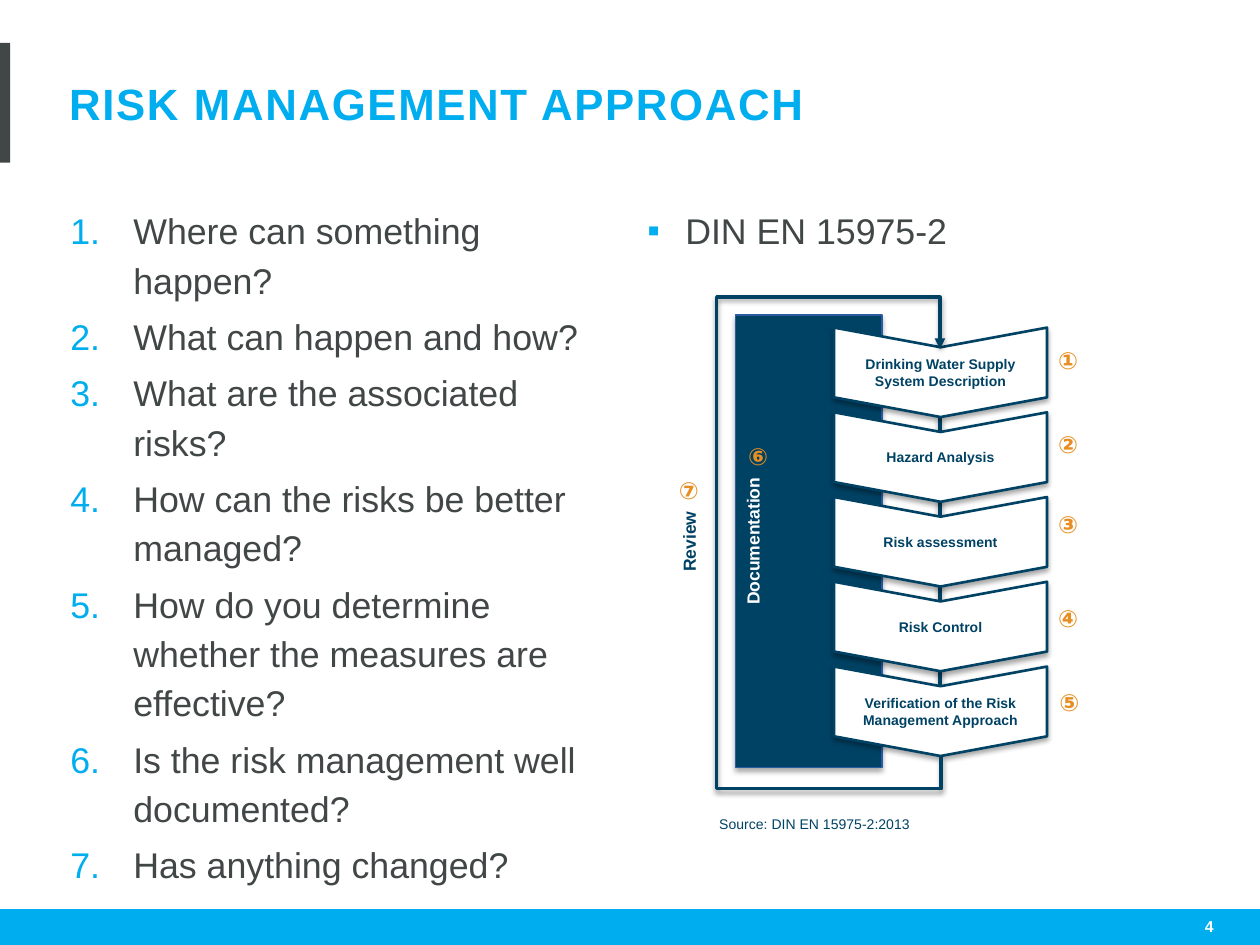
"""Builds the risk management approach slide."""
from lxml import etree
from pptx import Presentation
from pptx.dml.color import RGBColor
from pptx.enum.shapes import MSO_CONNECTOR, MSO_SHAPE
from pptx.enum.text import MSO_ANCHOR, PP_ALIGN
from pptx.oxml.ns import qn
from pptx.util import Inches, Pt

RECTANGLE, CHEVRON = MSO_SHAPE.RECTANGLE, MSO_SHAPE.CHEVRON
STRAIGHT, ELBOW = MSO_CONNECTOR.STRAIGHT, MSO_CONNECTOR.ELBOW
TOP, MIDDLE = MSO_ANCHOR.TOP, MSO_ANCHOR.MIDDLE
LEFT, CENTER, RIGHT = PP_ALIGN.LEFT, PP_ALIGN.CENTER, PP_ALIGN.RIGHT
SKY = RGBColor(0x00, 0xAE, 0xEF)
TITLE_SKY = RGBColor(0x00, 0xAE, 0xF0)
GRAY = RGBColor(0x41, 0x46, 0x46)
NAVY = RGBColor(0x00, 0x42, 0x64)
EDGE_BLUE = RGBColor(0x2A, 0x5B, 0xA3)
ORANGE = RGBColor(0xE7, 0x8E, 0x23)
WHITE = RGBColor(0xFF, 0xFF, 0xFF)
FONT = "Arial"

TITLE = "RISK MANAGEMENT APPROACH"
QUESTIONS = [
    "Where can something happen?",
    "What can happen and how?",
    "What are the associated risks?",
    "How can the risks be better managed?",
    "How do you determine whether the measures are effective?",
    "Is the risk management well documented?",
    "Has anything changed?",
]
STANDARD = ["DIN EN 15975-2"]
STEPS = [
    "Drinking Water Supply System Description",
    "Hazard Analysis",
    "Risk assessment",
    "Risk Control",
    "Verification of the Risk Management Approach",
]
BADGES = [
    ("①", 8.3, 2.7), ("②", 8.3, 3.36), ("③", 8.3, 4), ("④", 8.3, 4.74),
    ("⑤", 8.31, 5.41), ("⑥", 5.84, 3.46), ("⑦", 5.29, 3.73),
]
SOURCE = "Source: DIN EN 15975-2:2013"
STEP_TOP, STEP_PITCH = 2.11, 0.6725
LOOP_START, LOOP_END = (7.47, 6.01), (7.46, 2.77)
LOOP_LEFT, LOOP_TOP, LOOP_BOTTOM = 5.66, 2.36, 6.26


def add_child(parent, tag, **attributes):
    return etree.SubElement(parent, qn(tag), attributes)


def set_shadow(shape, opacity=0, distance=0):
    effects = add_child(shape._element.spPr, "a:effectLst")
    if opacity:
        shadow = add_child(effects, "a:outerShdw", blurRad=str(Pt(3.1)),
                           dist=str(Pt(distance)), dir="5400000", rotWithShape="0")
        color = add_child(shadow, "a:srgbClr", val="000000")
        add_child(color, "a:alpha", val=str(opacity * 1000))


def write(shape, lines, size, color, bold=False, align=LEFT, anchor=TOP, wrap=True):
    frame = shape.text_frame
    frame.text = "\n".join(lines)
    frame.word_wrap = wrap
    frame.vertical_anchor = anchor
    for paragraph in frame.paragraphs:
        paragraph.alignment = align
        for span in paragraph.runs:
            span.font.name, span.font.size = FONT, Pt(size)
            span.font.bold, span.font.color.rgb = bold, color
    return frame


def add_text(page, place, lines, size, color, **options):
    box = page.shapes.add_textbox(*map(Inches, place))
    write(box, lines, size, color, **options)
    return box


def add_block(page, kind, place, fill, line=None, width=0.75, shadow=False):
    block = page.shapes.add_shape(kind, *map(Inches, place))
    block.fill.solid()
    block.fill.fore_color.rgb = fill
    if line is None:
        block.line.fill.background()
    else:
        block.line.color.rgb = line
        block.line.width = Pt(width)
    if shadow:
        set_shadow(block, 35, 1.8)
    else:
        block.shadow.inherit = False
    return block


def add_line(page, kind, start, end):
    line = page.shapes.add_connector(kind, *map(Inches, start + end))
    line.line.color.rgb = NAVY
    line.line.width = Pt(2)
    set_shadow(line, 38, 1.6)
    return line


def add_list(page, place, lines, indent, bullet, **attributes):
    box = add_text(page, place, lines, 20.4, GRAY)
    for index, paragraph in enumerate(box.text_frame.paragraphs):
        paragraph.line_spacing = 1.15
        paragraph.space_before = Pt(4.1 if index else 0)
        properties = paragraph._p.get_or_add_pPr()
        properties.set("marL", str(Inches(indent)))
        properties.set("indent", str(-Inches(indent)))
        add_child(add_child(properties, "a:buClr"), "a:srgbClr", val=str(SKY))
        add_child(properties, "a:buFont", typeface=FONT)
        add_child(properties, bullet, **attributes)


def add_review_loop(page):
    (start_x, start_y), (end_x, end_y) = LOOP_START, LOOP_END
    length, offset = start_y - end_y, start_x - end_x
    middle_x, middle_y = (start_x + end_x) / 2, (start_y + end_y) / 2
    loop = add_line(page, ELBOW,
                    (middle_x + length / 2, middle_y - offset / 2),
                    (middle_x - length / 2, middle_y + offset / 2))
    properties = loop._element.spPr
    properties.find(qn("a:xfrm")).set("rot", "5400000")
    geometry = properties.find(qn("a:prstGeom"))
    geometry.set("prst", "bentConnector5")
    guides = geometry.find(qn("a:avLst"))
    bends = [(start_y - LOOP_BOTTOM) / length, (start_x - LOOP_LEFT) / offset,
             (start_y - LOOP_TOP) / length]
    for number, bend in enumerate(bends, 1):
        add_child(guides, "a:gd", name=f"adj{number}", fmla=f"val {round(bend * 100000)}")
    add_child(loop.line._get_or_add_ln(), "a:tailEnd", type="triangle")


def add_diagram(page):
    add_line(page, STRAIGHT, (7.46, 3.31), (7.46, 5.45))
    documentation = add_block(page, RECTANGLE, (5.84, 2.5, 1.16, 3.59), NAVY,
                              EDGE_BLUE, shadow=True)
    frame = write(documentation, ["Documentation"], 10, WHITE, bold=True, align=CENTER)
    frame._txBody.bodyPr.set("vert", "vert270")
    for index, step in enumerate(STEPS):
        place = (7.11, STEP_TOP + index * STEP_PITCH, 0.71, 1.69)
        chevron = add_block(page, CHEVRON, place, WHITE, NAVY, 1.5, shadow=True)
        chevron.adjustments[0] = 0.22
        chevron.rotation = 90
        frame = write(chevron, [step], 8, NAVY, bold=True, align=CENTER, anchor=MIDDLE)
        frame._txBody.bodyPr.set("vert", "vert270")
    add_review_loop(page)
    review = add_text(page, (5.13, 4.16, 0.68, 0.27), ["Review"], 10, NAVY,
                      bold=True, wrap=False)
    review.rotation = 270
    for badge, left, top in BADGES:
        add_text(page, (left, top, 0.37, 0.33), [badge], 13.5, ORANGE,
                 bold=True, wrap=False)
    source = add_block(page, RECTANGLE, (5.61, 6.42, 3.08, 0.24), WHITE)
    write(source, [SOURCE], 8, NAVY)


def main():
    deck = Presentation()
    deck.slide_width, deck.slide_height = Inches(10), Inches(7.5)
    page = deck.slides.add_slide(deck.slide_layouts[6])
    add_block(page, RECTANGLE, (0, 7.22, 10, 0.28), SKY, SKY)
    add_text(page, (7.29, 7.15, 2.44, 0.4), ["4"], 9, WHITE, bold=True,
             align=RIGHT, anchor=MIDDLE)
    add_block(page, RECTANGLE, (0, 0.34, 0.08, 0.95), GRAY)
    title = add_text(page, (0.45, 0.37, 7.46, 0.9), [TITLE], 25, TITLE_SKY,
                     bold=True, anchor=MIDDLE)
    title.text_frame.paragraphs[0].runs[0].font._element.set("spc", "100")
    add_list(page, (0.46, 1.56, 4.42, 5.46), QUESTIONS, 0.5,
             "a:buAutoNum", type="arabicPeriod")
    add_list(page, (5.04, 1.56, 4.21, 5.46), STANDARD, 0.3, "a:buChar", char="▪")
    add_diagram(page)
    deck.save("out.pptx")


if __name__ == "__main__":
    main()
